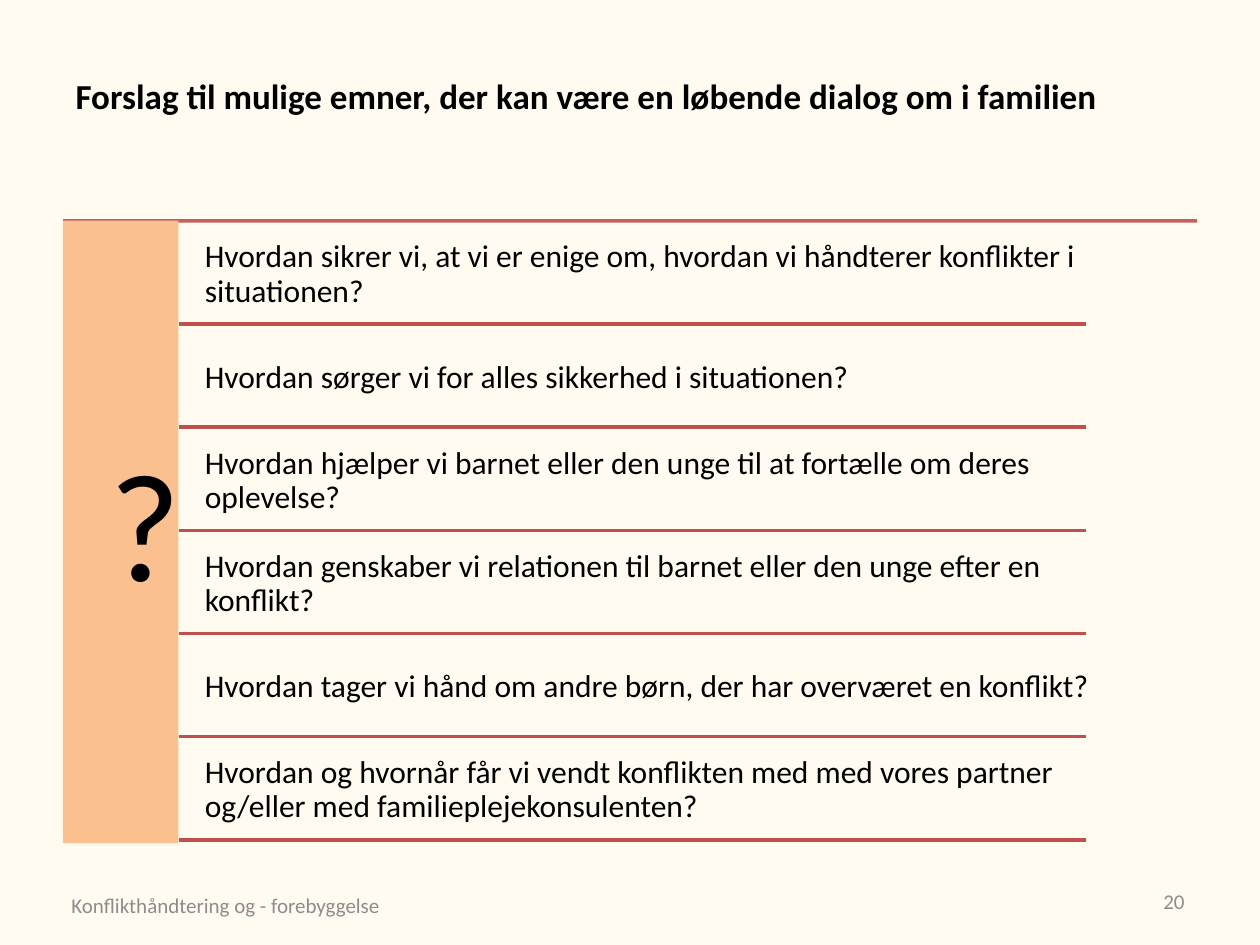
from lxml import etree
from pptx import Presentation
from pptx.dml.color import RGBColor
from pptx.enum.shapes import MSO_CONNECTOR, MSO_SHAPE
from pptx.enum.text import MSO_ANCHOR, PP_ALIGN
from pptx.oxml.ns import qn
from pptx.util import Cm, Pt

STRAIGHT = MSO_CONNECTOR.STRAIGHT
RECTANGLE = MSO_SHAPE.RECTANGLE
MIDDLE = MSO_ANCHOR.MIDDLE
LEFT, CENTER, RIGHT = PP_ALIGN.LEFT, PP_ALIGN.CENTER, PP_ALIGN.RIGHT

CREAM = RGBColor(0xFF, 0xFB, 0xF0)
PEACH = RGBColor(0xFA, 0xC0, 0x90)
RED = RGBColor(0xC0, 0x50, 0x4D)
BLACK = RGBColor(0x00, 0x00, 0x00)
GRAY = RGBColor(0x8C, 0x8C, 0x8C)
FONT = "Calibri"

TITLE = "Forslag til mulige emner, der kan være en løbende dialog om i familien"
QUESTIONS = [
    "Hvordan sikrer vi, at vi er enige om, hvordan vi håndterer konflikter i situationen?",
    "Hvordan sørger vi for alles sikkerhed i situationen?",
    "Hvordan hjælper vi barnet eller den unge til at fortælle om deres oplevelse?",
    "Hvordan genskaber vi relationen til barnet eller den unge efter en konflikt?",
    "Hvordan tager vi hånd om andre børn, der har overværet en konflikt?",
    "Hvordan og hvornår får vi vendt konflikten med med vores partner "
    "og/eller med familieplejekonsulenten?",
]


def write_text(shape, text, size, color=BLACK, alignment=LEFT, inset=None, spacing=None):
    """Fill a shape with one vertically centred paragraph."""
    frame = shape.text_frame
    frame.word_wrap = True
    frame.vertical_anchor = MIDDLE
    if inset is not None:
        frame.margin_left = frame.margin_right = inset
        frame.margin_top = frame.margin_bottom = inset
    frame.text = text
    paragraph = frame.paragraphs[0]
    paragraph.alignment = alignment
    paragraph.line_spacing = spacing
    paragraph.font.name = FONT
    paragraph.font.size = Pt(size)
    paragraph.font.color.rgb = color
    return paragraph


def add_rule(slide, left, top, width, opacity=None):
    """Draw a horizontal red rule, optionally translucent."""
    rule = slide.shapes.add_connector(STRAIGHT, left, top, left + width, top)
    rule.line.color.rgb = RED
    rule.line.width = Pt(2)
    properties = rule._element.spPr
    etree.SubElement(properties, qn("a:effectLst"))
    if opacity is not None:
        color = next(properties.iter(qn("a:srgbClr")))
        etree.SubElement(color, qn("a:alpha")).set("val", str(opacity * 1000))


def add_title(slide, left, top, width, height):
    """Place the bold heading in the title placeholder."""
    title = slide.shapes.title
    title.left, title.top, title.width, title.height = left, top, width, height
    write_text(title, TITLE, 20).font.bold = True
    title.text_frame.margin_bottom = Cm(0.98)


def add_question_list(slide, left, top, width, height):
    """Draw the question mark bar and the ruled rows of questions."""
    bar_width = Cm(2.33)
    add_rule(slide, left, top, width, opacity=90)
    bar = slide.shapes.add_shape(RECTANGLE, left, top, bar_width, height)
    bar.shadow.inherit = False
    bar.fill.solid()
    bar.fill.fore_color.rgb = PEACH
    bar.line.fill.background()
    write_text(bar, "?", 88, alignment=CENTER, inset=Cm(0.94), spacing=0.9)

    gap = Cm(0.1)
    row_height = Cm(1.98)
    rows_left = left + bar_width
    for index, question in enumerate(QUESTIONS):
        row_top = top + gap + index * (row_height + gap)
        box = slide.shapes.add_textbox(rows_left + Cm(0.35), row_top, Cm(19.5), row_height)
        write_text(box, question, 18, inset=Cm(0.18), spacing=0.9)
        add_rule(slide, rows_left, row_top + row_height, Cm(18.29))


def add_footer(slide, left, top, width, height):
    """Place the footer text at the left and the page number at the right."""
    footer = slide.shapes.add_textbox(left, top + Cm(0.08), Cm(8.05), height)
    write_text(footer, "Konflikthåndtering og - forebyggelse", 12, GRAY)
    number_width = Cm(5.92)
    number = slide.shapes.add_textbox(left + width - number_width, top, number_width, height)
    write_text(number, "20", 12, GRAY, RIGHT)


def main():
    """Build and save the slide."""
    presentation = Presentation()
    presentation.slide_width = Cm(25.4)
    presentation.slide_height = Cm(19.05)
    slide = presentation.slides.add_slide(presentation.slide_layouts[5])
    slide.background.fill.solid()
    slide.background.fill.fore_color.rgb = CREAM
    add_title(slide, Cm(1.27), Cm(0.76), Cm(22.86), Cm(3.18))
    add_question_list(slide, Cm(1.27), Cm(4.45), Cm(22.86), Cm(12.55))
    add_footer(slide, Cm(1.19), Cm(17.65), Cm(22.94), Cm(1.02))
    presentation.save("out.pptx")


if __name__ == "__main__":
    main()
